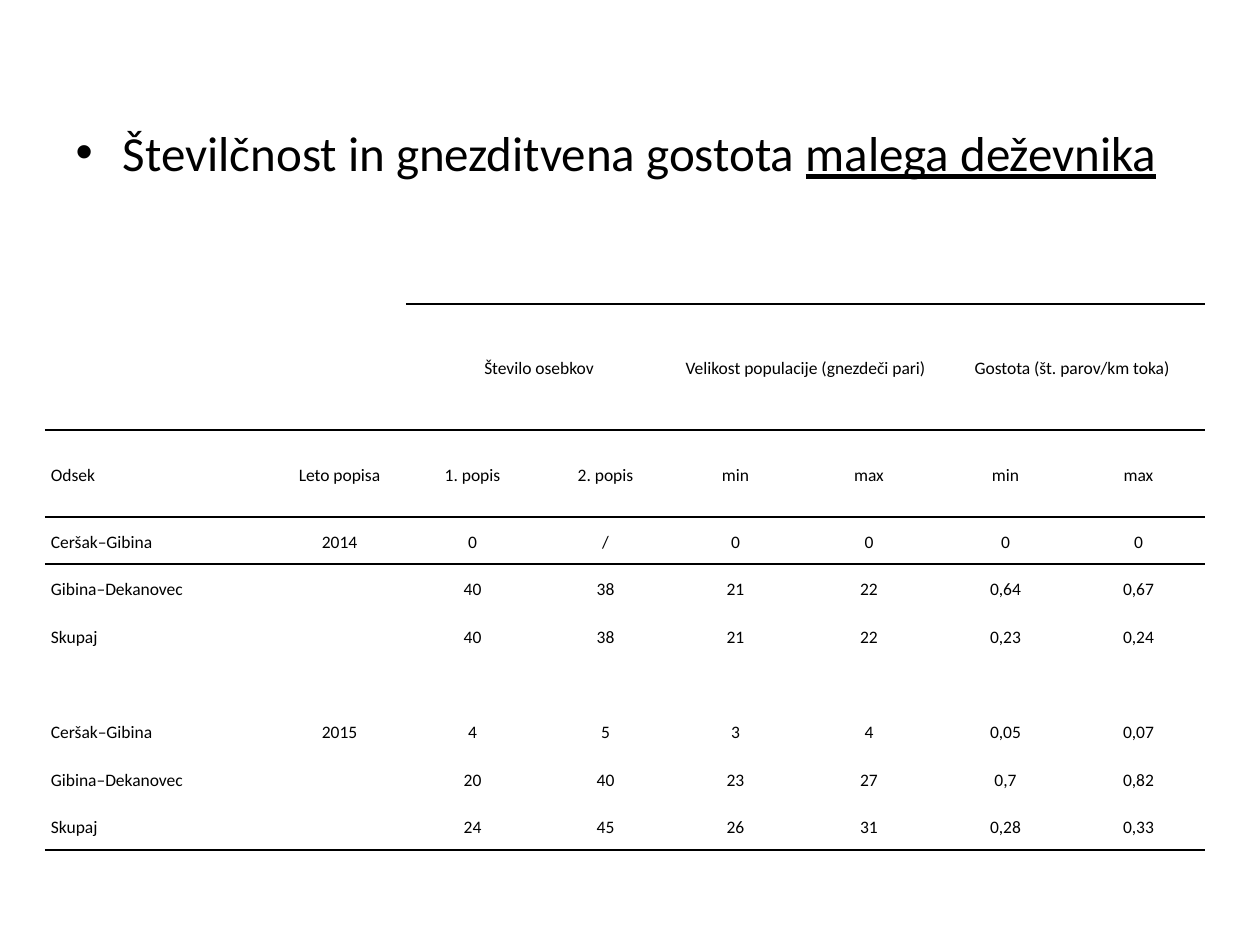
from lxml.etree import SubElement
from pptx import Presentation
from pptx.dml.color import RGBColor
from pptx.enum.text import MSO_ANCHOR as Anchor, PP_ALIGN as Align
from pptx.oxml.ns import qn
from pptx.util import Emu, Pt

PX_PER_INCH = 126
NO_STYLE_TABLE = "{2D5ABB26-0587-4C30-8999-92F81FD0307C}"
BLACK = "000000"

COLUMN_WIDTHS = [228, 133, 133, 133, 127, 140, 133, 133]
ROW_HEIGHTS = [126, 87, 47, 48, 48, 48, 47, 48, 47]
GROUP_COLUMNS = [2, 4, 6]
SURVEY_ROWS = [
    ["", "", "Število osebkov", "", "Velikost populacije (gnezdeči pari)", "",
     "Gostota (št. parov/km toka)", ""],
    ["Odsek", "Leto popisa", "1. popis", "2. popis", "min", "max", "min", "max"],
    ["Ceršak–Gibina", "2014", "0", "/", "0", "0", "0", "0"],
    ["Gibina–Dekanovec", "", "40", "38", "21", "22", "0,64", "0,67"],
    ["Skupaj", "", "40", "38", "21", "22", "0,23", "0,24"],
    [""] * 8,
    ["Ceršak–Gibina", "2015", "4", "5", "3", "4", "0,05", "0,07"],
    ["Gibina–Dekanovec", "", "20", "40", "23", "27", "0,7", "0,82"],
    ["Skupaj", "", "24", "45", "26", "31", "0,28", "0,33"],
]


def px(length):
    return Emu(round(length * 914400 / PX_PER_INCH))


def color(hex_string):
    return RGBColor.from_string(hex_string)


class SlideBuilder:
    font_name = "Calibri"
    heading_size = 28
    table_size = 10

    def __init__(self, presentation):
        self.slide = presentation.slides.add_slide(presentation.slide_layouts[1])
        title = self.slide.shapes.title
        title.element.getparent().remove(title.element)

    def format_font(self, font, size):
        font.name = self.font_name
        font.size = Pt(size)
        font.color.rgb = color(BLACK)

    def bullet(self, left, top, width, height, plain, underlined):
        body = self.slide.placeholders[1]
        body.left, body.top, body.width, body.height = map(px, (left, top, width, height))
        paragraph = body.text_frame.paragraphs[0]
        for text, underline in ((plain, None), (underlined, True)):
            run = paragraph.add_run()
            run.text = text
            self.format_font(run.font, self.heading_size)
            run.font.underline = underline

    def cell_text(self, cell, text, alignment):
        cell.margin_left = cell.margin_right = px(6)
        cell.margin_top = cell.margin_bottom = 0
        cell.vertical_anchor = Anchor.MIDDLE
        cell.text_frame.text = text
        paragraph = cell.text_frame.paragraphs[0]
        paragraph.alignment = alignment
        paragraph.line_spacing = 1.15
        for run in paragraph.runs:
            self.format_font(run.font, self.table_size)

    def cell_border(self, cell, side):
        """Draw a 1 pt line on one side: "T" or "B", top before bottom."""
        properties = cell._tc.get_or_add_tcPr()
        line = SubElement(properties, qn(f"a:ln{side}"), w=str(Pt(1)))
        fill = SubElement(line, qn("a:solidFill"))
        SubElement(fill, qn("a:srgbClr"), val=BLACK)

    def table(self, left, top, widths, heights, rows, group_columns):
        """Add a ruled table whose first row has headings two columns wide."""
        frame = self.slide.shapes.add_table(
            len(rows), len(widths), px(left), px(top), px(sum(widths)), px(sum(heights)))
        table = frame.table
        table.first_row = table.horz_banding = False
        table._tbl.tblPr.find(qn("a:tableStyleId")).text = NO_STYLE_TABLE
        for column, width in zip(table.columns, widths):
            column.width = px(width)
        for row, height in zip(table.rows, heights):
            row.height = px(height)

        last_row = len(rows) - 1
        for row_index, row in enumerate(rows):
            for column_index, text in enumerate(row):
                cell = table.cell(row_index, column_index)
                self.cell_text(cell, text, Align.CENTER if column_index else Align.LEFT)
                if row_index in (1, 2) or (row_index == 0 and column_index >= group_columns[0]):
                    self.cell_border(cell, "T")
                if row_index in (0, 1, last_row):
                    self.cell_border(cell, "B")
        for column_index in group_columns:
            table.cell(0, column_index).merge(table.cell(0, column_index + 1))


def main():
    presentation = Presentation()
    presentation.slide_width, presentation.slide_height = px(1260), px(945)
    builder = SlideBuilder(presentation)
    builder.bullet(63, 116, 1134, 728,
                   "Številčnost in gnezditvena gostota ", "malega deževnika")
    builder.table(45, 304, COLUMN_WIDTHS, ROW_HEIGHTS, SURVEY_ROWS, GROUP_COLUMNS)
    presentation.save("out.pptx")


if __name__ == "__main__":
    main()
